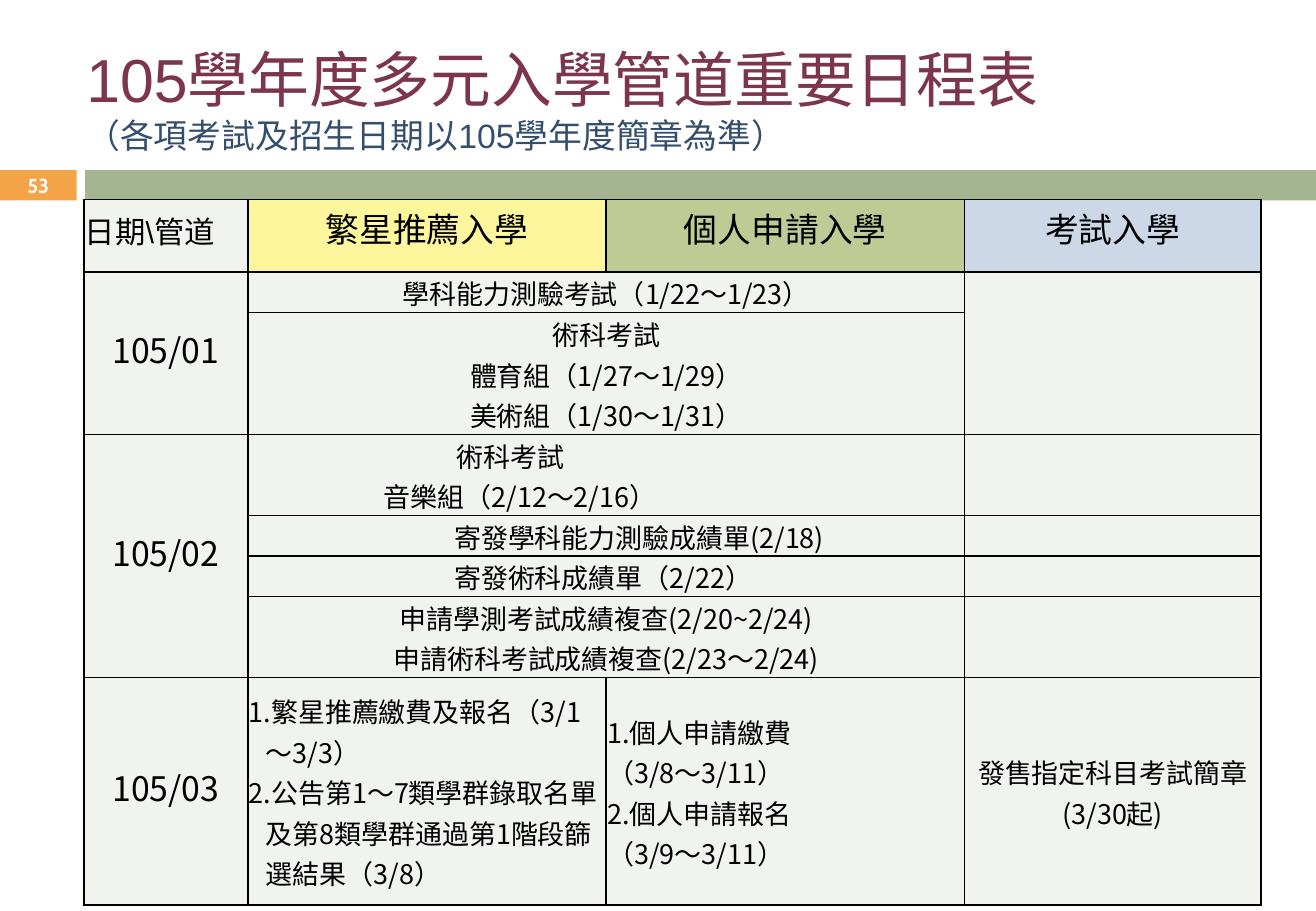
from pptx import Presentation
from pptx.dml.color import RGBColor
from pptx.enum.shapes import MSO_SHAPE
from pptx.enum.text import MSO_ANCHOR, MSO_AUTO_SIZE, PP_ALIGN
from pptx.oxml.ns import qn
from pptx.util import Pt
from lxml.etree import SubElement

ORANGE = RGBColor(0xF3, 0xA4, 0x47)
SAGE = RGBColor(0xA5, 0xB5, 0x92)
PLUM = RGBColor(0x7C, 0x35, 0x4D)
NAVY = RGBColor(0x34, 0x4E, 0x6D)
WHITE = RGBColor(0xFF, 0xFF, 0xFF)
BLACK = RGBColor(0, 0, 0)
PALE = RGBColor(0xF0, 0xF3, 0xEE)
YELLOW = RGBColor(0xFD, 0xF6, 0x9C)
GREEN = RGBColor(0xBE, 0xCB, 0x95)
BLUE = RGBColor(0xCC, 0xD8, 0xE7)

SANS = "Noto Sans CJK SC"
LEFT, CENTER, JUSTIFY = PP_ALIGN.LEFT, PP_ALIGN.CENTER, PP_ALIGN.JUSTIFY

COL_WIDTHS = [97.2, 212.4, 212.4, 175.7]
ROW_HEIGHTS = [43.2, 24, 72, 48, 24, 24, 48, 135]
HEADERS = [
    ("日期\\管道", PALE, LEFT, 18, "Arial"),
    ("繁星推薦入學", YELLOW, CENTER, 20, "Cabin"),
    ("個人申請入學", GREEN, CENTER, 20, "Cabin"),
    ("考試入學", BLUE, CENTER, 20, "Cabin"),
]
MONTHS = [(1, 2, "105/01"), (3, 4, "105/02"), (7, 1, "105/03")]
SHARED_EVENTS = [
    (1, ["學科能力測驗考試（1/22～1/23）"], CENTER, [0]),
    (2, ["術科考試", "體育組（1/27～1/29）", "美術組（1/30～1/31）"], CENTER, [0] * 3),
    (3, ["術科考試", "音樂組（2/12～2/16）"], LEFT, [123, 80]),
    (4, ["寄發學科能力測驗成績單(2/18)"], LEFT, [121.7]),
    (5, ["寄發術科成績單（2/22）"], LEFT, [121.7]),
    (6, ["申請學測考試成績複查(2/20~2/24)", "申請術科考試成績複查(2/23～2/24)"],
     CENTER, [0] * 2),
]
MARCH_EVENTS = [
    (1, ["1.繁星推薦繳費及報名（3/1～3/3）",
         "2.公告第1～7類學群錄取名單及第8類學群通過第1階段篩選結果（3/8）"], LEFT, 10),
    (2, ["1.個人申請繳費", "（3/8～3/11）", "2.個人申請報名", "（3/9～3/11）"],
     JUSTIFY, 12),
    (3, ["發售指定科目考試簡章(3/30起)"], CENTER, 0),
]


def set_font(p, size, name, color):
    p.font.size, p.font.name, p.font.color.rgb = Pt(size), name, color


def add_title(s, x, y, w, h):
    title = s.shapes.title
    title.left, title.top, title.width, title.height = Pt(x), Pt(y), Pt(w), Pt(h)
    tf = title.text_frame
    tf.text = "105學年度多元入學管道重要日程表\n（各項考試及招生日期以105學年度簡章為準）"
    tf.auto_size, tf.vertical_anchor = MSO_AUTO_SIZE.NONE, MSO_ANCHOR.TOP
    for p, size, color in zip(tf.paragraphs, (36, 20), (PLUM, NAVY)):
        p.alignment = LEFT
        set_font(p, size, "Arial", color)


def add_bar(s, x, y, w, h, color):
    sp = s.shapes.add_shape(MSO_SHAPE.RECTANGLE, Pt(x), Pt(y), Pt(w), Pt(h))
    sp.shadow.inherit = False
    sp.fill.solid()
    sp.fill.fore_color.rgb = color
    sp.line.fill.background()
    return sp


def add_band(s, x, y, w, h):
    number_w, gap = 45.4, 5
    number = add_bar(s, x, y, number_w, h, ORANGE)
    add_bar(s, x + number_w + gap, y, w - number_w - gap, h, SAGE)
    tf = number.text_frame
    tf.margin_top = tf.margin_bottom = 0
    tf.vertical_anchor = MSO_ANCHOR.MIDDLE
    p = tf.paragraphs[0]
    p.text, p.alignment = "53", CENTER
    set_font(p, 12, "Cabin", WHITE)
    p.font.bold = True


def style_cell(cell):
    tcPr = cell._tc.get_or_add_tcPr()
    for side in ("a:lnL", "a:lnR", "a:lnT", "a:lnB"):
        ln = SubElement(tcPr, qn(side), w=str(Pt(1)))
        SubElement(SubElement(ln, qn("a:solidFill")), qn("a:srgbClr"), val=str(BLACK))
    cell.fill.solid()
    cell.fill.fore_color.rgb = PALE
    cell.margin_left = cell.margin_right = Pt(0.7)
    cell.margin_top = cell.margin_bottom = 0
    cell.vertical_anchor = MSO_ANCHOR.MIDDLE
    cell.text_frame.paragraphs[0].line_spacing = Pt(24)


def fill_cell(cell, lines, align, size=16, font=SANS, spacing=24, indents=None, hang=0):
    cell.text = "\n".join(lines)
    for p, indent in zip(cell.text_frame.paragraphs, indents or [hang] * len(lines)):
        p.alignment, p.line_spacing = align, Pt(spacing)
        set_font(p, size, font, BLACK)
        pPr = p._p.get_or_add_pPr()
        pPr.set("marL", str(Pt(indent)))
        pPr.set("indent", str(Pt(-hang)))


def add_schedule(s, x, y):
    frame = s.shapes.add_table(len(ROW_HEIGHTS), len(COL_WIDTHS), Pt(x), Pt(y),
                               Pt(sum(COL_WIDTHS)), Pt(sum(ROW_HEIGHTS)))
    table = frame.table
    table.first_row = table.horz_banding = False
    for col, width in zip(table.columns, COL_WIDTHS):
        col.width = Pt(width)
    for row, height in zip(table.rows, ROW_HEIGHTS):
        row.height = Pt(height)
    for cell in table.iter_cells():
        style_cell(cell)

    for c, (text, color, align, size, font) in enumerate(HEADERS):
        cell = table.cell(0, c)
        fill_cell(cell, [text], align, size, font, spacing=20)
        cell.fill.fore_color.rgb = color
    for r, span, month in MONTHS:
        cell = table.cell(r, 0)
        if span > 1:
            cell.merge(table.cell(r + span - 1, 0))
        fill_cell(cell, [month], CENTER, 20)
    for r, lines, align, indents in SHARED_EVENTS:
        cell = table.cell(r, 1)
        cell.merge(table.cell(r, 2))
        fill_cell(cell, lines, align, indents=indents)
    table.cell(1, 3).merge(table.cell(2, 3))
    for c, lines, align, hang in MARCH_EVENTS:
        fill_cell(table.cell(7, c), lines, align, hang=hang)


def main():
    prs = Presentation()
    prs.slide_width, prs.slide_height = Pt(780), Pt(540)
    s = prs.slides.add_slide(prs.slide_layouts[5])
    add_band(s, 0, 100.8, 780, 18)
    add_schedule(s, 49.7, 118.1)
    add_title(s, 44, 21, 702.7, 96.5)
    prs.save("out.pptx")


if __name__ == "__main__":
    main()
